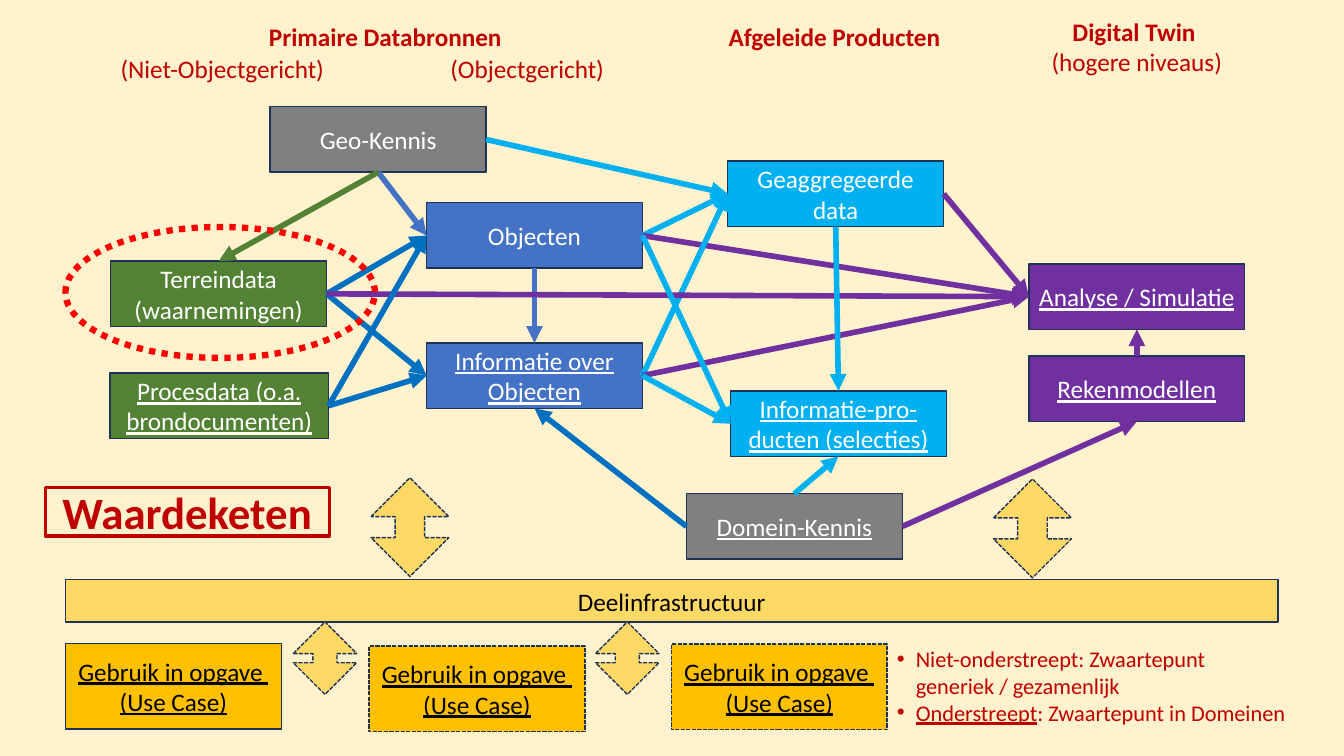
from lxml import etree
from pptx import Presentation
from pptx.dml.color import RGBColor
from pptx.enum.dml import MSO_LINE
from pptx.enum.shapes import MSO_CONNECTOR, MSO_SHAPE
from pptx.enum.text import MSO_ANCHOR, PP_ALIGN
from pptx.oxml.ns import qn
from pptx.util import Cm, Pt

RECTANGLE, ELLIPSE, DOUBLE_ARROW = MSO_SHAPE.RECTANGLE, MSO_SHAPE.OVAL, MSO_SHAPE.UP_DOWN_ARROW
DASH, DOT = MSO_LINE.SQUARE_DOT, MSO_LINE.ROUND_DOT
CENTER, LEFT, MIDDLE = PP_ALIGN.CENTER, PP_ALIGN.LEFT, MSO_ANCHOR.MIDDLE
STRAIGHT = MSO_CONNECTOR.STRAIGHT
SITES = {"top": 0, "left": 1, "bottom": 2, "right": 3}

COLORS = {
    "background": "FFF2CC", "outline": "1E3256", "white": "FFFFFF", "black": "000000",
    "green": "548235", "blue": "4472C4", "cyan": "00B0F0", "purple": "7030A0",
    "gray": "808080", "steel": "0070C0", "sand": "FFD966", "amber": "FFC000",
    "crimson": "C00000", "red": "FF0000",
}

BOX_WIDTH, BOX_HEIGHT, USE_CASE_HEIGHT = 5.44, 1.65, 2.16
BOXES = {
    "terrein": ("Terreindata\n(waarnemingen)", 2.79, 6.58, BOX_WIDTH, "green", False),
    "objecten": ("Objecten", 10.75, 5.11, BOX_WIDTH, "blue", False),
    "informatie": ("Informatie over Objecten", 10.75, 8.64, BOX_WIDTH, "blue", True),
    "geaggregeerd": ("Geaggregeerde data", 18.34, 4.06, BOX_WIDTH, "cyan", False),
    "analyse": ("Analyse / Simulatie", 25.93, 6.65, BOX_WIDTH, "purple", True),
    "producten": ("Informatie-pro-ducten (selecties)", 18.41, 9.85, BOX_WIDTH, "cyan", True),
    "reken": ("Rekenmodellen", 25.93, 8.97, BOX_WIDTH, "purple", True),
    "domein": ("Domein-Kennis", 17.3, 12.44, BOX_WIDTH, "gray", True),
    "proces": ("Procesdata (o.a. brondocumenten)", 2.77, 9.4, 5.51, "green", True),
    "geo": ("Geo-Kennis", 6.81, 2.69, BOX_WIDTH, "gray", False),
}
FLOWS = [
    ("terrein", "right", "objecten", "left", "steel"),
    ("objecten", "right", "geaggregeerd", "left", "cyan"),
    ("objecten", "bottom", "informatie", "top", "blue"),
    ("objecten", "right", "analyse", "left", "purple"),
    ("informatie", "right", "geaggregeerd", "left", "cyan"),
    ("geaggregeerd", "right", "analyse", "left", "purple"),
    ("informatie", "right", "analyse", "left", "purple"),
    ("terrein", "right", "informatie", "left", "steel"),
    ("terrein", "right", "analyse", "left", "purple"),
    ("proces", "right", "informatie", "left", "steel"),
    ("proces", "right", "objecten", "left", "steel"),
    ("informatie", "right", "producten", "left", "cyan"),
    ("geaggregeerd", "bottom", "producten", "top", "cyan"),
    ("objecten", "right", "producten", "left", "cyan"),
    ("domein", "top", "producten", "bottom", "cyan"),
    ("domein", "right", "reken", "bottom", "purple"),
    ("reken", "top", "analyse", "bottom", "purple"),
    ("geo", "bottom", "objecten", "left", "blue"),
    ("geo", "bottom", "terrein", "top", "green"),
    ("geo", "right", "geaggregeerd", "left", "cyan"),
    ("domein", "left", "informatie", "bottom", "steel"),
]
HEADINGS = [
    ("Primaire Databronnen", 6.53, 0.41, 6.43, 1.02, LEFT, True),
    ("Afgeleide Producten", 18.11, 0.41, 5.89, 1.02, LEFT, True),
    ("Digital Twin \v(hogere niveaus)", 26.21, 0.28, 4.88, 1.8, CENTER, False),
    ("(Objectgericht)", 11.1, 1.22, 4.42, 1.02, LEFT, False),
    ("(Niet-Objectgericht)", 2.79, 1.22, 5.72, 1.02, LEFT, False),
]
USE_CASE = "Gebruik in opgave \n(Use Case)"
USE_CASES = [(1.65, 16.21, None), (9.3, 16.28, DASH), (16.92, 16.23, DASH)]
EXCHANGES = [(25.04, 12.07, 1.96, 2.49), (9.35, 12.04, 1.96, 2.49),
             (7.39, 15.67, 1.6, 1.83), (15.01, 15.67, 1.6, 1.83)]
LEGEND = "Niet-onderstreept: Zwaartepunt \vgeneriek / gezamenlijk\nOnderstreept"
LEGEND_END = ": Zwaartepunt in Domeinen"


def rgb(name):
    return RGBColor.from_string(COLORS[name])


def write(shape, text, color, size=18, align=CENTER, bold=False, underline=False, bullet=None):
    shape.text_frame.text = text
    for paragraph in shape.text_frame.paragraphs:
        paragraph.alignment = align
        if bullet:
            properties = paragraph._p.get_or_add_pPr()
            properties.set("marL", str(Cm(0.48)))
            properties.set("indent", str(-Cm(0.48)))
            etree.SubElement(properties, qn("a:buFont"), typeface="Arial")
            etree.SubElement(properties, qn("a:buChar"), char=bullet)
        font = paragraph.font
        font.name, font.size, font.bold, font.underline = "Calibri", Pt(size), bold, underline
        font.color.rgb = rgb(color)


def add_shape(slide, kind, bounds, fill=None, line="outline", width=1, dash=None):
    shape = slide.shapes.add_shape(kind, *map(Cm, bounds))
    shape.shadow.inherit = False
    if fill:
        shape.fill.solid()
        shape.fill.fore_color.rgb = rgb(fill)
    else:
        shape.fill.background()
    shape.line.color.rgb = rgb(line)
    shape.line.width = Pt(width)
    if dash:
        shape.line.dash_style = dash
    shape.text_frame.vertical_anchor = MIDDLE
    return shape


def add_flow(slide, start, start_side, end, end_side, color):
    connector = slide.shapes.add_connector(STRAIGHT, 0, 0, 0, 0)
    connector.begin_connect(start, SITES[start_side])
    connector.end_connect(end, SITES[end_side])
    connector.line.color.rgb = rgb(color)
    connector.line.width = Pt(4)
    outline = connector._element.spPr.find(qn("a:ln"))
    etree.SubElement(outline, qn("a:tailEnd"), type="triangle")
    etree.SubElement(connector._element.spPr, qn("a:effectLst"))


def add_text(slide, text, bounds, wrap, **style):
    box = slide.shapes.add_textbox(*map(Cm, bounds))
    box.text_frame.word_wrap = wrap
    write(box, text, "crimson", **style)
    return box.text_frame.paragraphs


def main():
    presentation = Presentation()
    presentation.slide_width, presentation.slide_height = Cm(33.87), Cm(19.05)
    slide = presentation.slides.add_slide(presentation.slide_layouts[6])
    slide.background.fill.solid()
    slide.background.fill.fore_color.rgb = rgb("background")

    boxes = {}
    for name, (text, left, top, width, fill, underline) in BOXES.items():
        boxes[name] = add_shape(slide, RECTANGLE, (left, top, width, BOX_HEIGHT), fill)
        write(boxes[name], text, "white", underline=underline)
    for start, start_side, end, end_side, color in FLOWS:
        add_flow(slide, boxes[start], start_side, boxes[end], end_side, color)

    infrastructure = add_shape(slide, RECTANGLE, (1.65, 14.61, 30.56, 1.07), "sand")
    write(infrastructure, "Deelinfrastructuur", "black")
    for left, top, dash in USE_CASES:
        bounds = (left, top, BOX_WIDTH, USE_CASE_HEIGHT)
        use_case = add_shape(slide, RECTANGLE, bounds, "amber", dash=dash)
        write(use_case, USE_CASE, "black", underline=True)

    for text, left, top, width, height, align, bold in HEADINGS:
        paragraphs = add_text(slide, text, (left, top, width, height), False, align=align, bold=bold)
        if "\v" in text:
            paragraphs[0].runs[0].font.bold = True
    legend = add_text(slide, LEGEND, (22.35, 16.13, 10.52, 2.31), True,
                      size=16, align=LEFT, bullet="•")
    legend[1].runs[0].font.underline = True
    legend[1].add_run().text = LEGEND_END

    title = add_shape(slide, RECTANGLE, (1.14, 12.29, 7.16, 1.22), line="crimson", width=2.25)
    write(title, "Waardeketen", "crimson", size=32, bold=True)
    for bounds in EXCHANGES:
        arrow = add_shape(slide, DOUBLE_ARROW, bounds, "sand", dash=DASH)
        arrow.adjustments[0], arrow.adjustments[1] = 0.5, 0.38
    add_shape(slide, ELLIPSE, (1.65, 5.72, 7.8, 3.3), line="red", width=4.5, dash=DOT)
    presentation.save("out.pptx")


if __name__ == "__main__":
    main()
